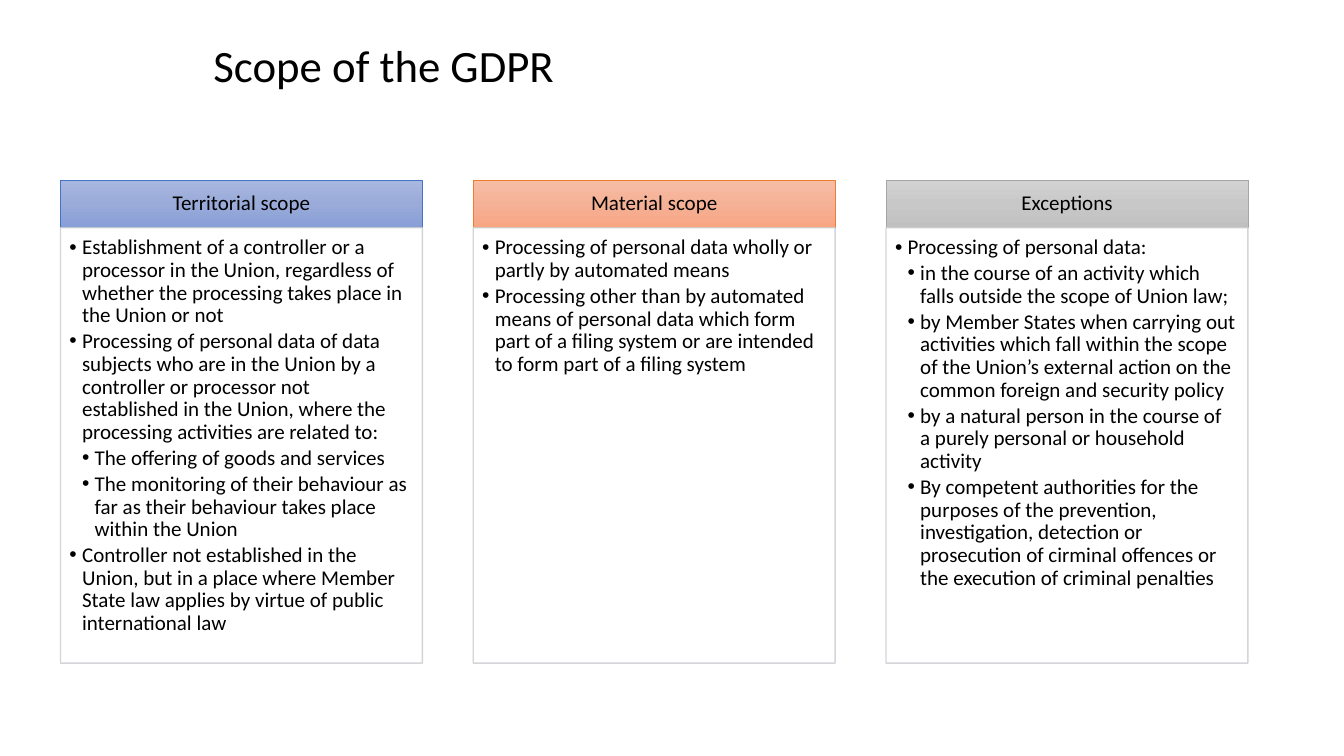
from copy import deepcopy

from lxml.etree import SubElement
from pptx import Presentation
from pptx.dml.color import RGBColor
from pptx.enum.shapes import MSO_SHAPE as Shape
from pptx.enum.text import MSO_ANCHOR as Anchor, PP_ALIGN as Align
from pptx.oxml.ns import qn
from pptx.util import Pt

FONT = "Calibri"
BODY_LINE = "CFD1D4"

# Column grid, in points
LEFT, PITCH, WIDTH = 43.2, 294.84, 258.5
HEADER_TOP, HEADER_HEIGHT, BODY_HEIGHT = 128.9, 33.8, 311
INDENT = 9

# Heading, gradient, border and (level, text) items of each column
COLUMNS = [
    ("Territorial scope", ("A8B7DF", "9AABD9", "889ED7"), "4472C4", [
        (1, "Establishment of a controller or a processor in the Union, "
            "regardless of whether the processing takes place in the Union or not"),
        (1, "Processing of personal data of data subjects who are in the Union "
            "by a controller or processor not established in the Union, where "
            "the processing activities are related to:"),
        (2, "The offering of goods and services"),
        (2, "The monitoring of their behaviour as far as their behaviour takes "
            "place within the Union"),
        (1, "Controller not established in the Union, but in a place where "
            "Member State law applies by virtue of public international law"),
    ]),
    ("Material scope", ("F7BDA5", "F5B196", "F8A582"), "ED7D31", [
        (1, "Processing of personal data wholly or partly by automated means"),
        (1, "Processing other than by automated means of personal data which "
            "form part of a filing system or are intended to form part of a "
            "filing system"),
    ]),
    ("Exceptions", ("D2D2D2", "C8C8C8", "C0C0C0"), "A5A5A5", [
        (1, "Processing of personal data:"),
        (2, "in the course of an activity which falls outside the scope of "
            "Union law;"),
        (2, "by Member States when carrying out activities which fall within "
            "the scope of the Union’s external action on the common foreign "
            "and security policy"),
        (2, "by a natural person in the course of a purely personal or "
            "household activity"),
        (2, "By competent authorities for the purposes of the prevention, "
            "investigation, detection or prosecution of cirminal offences or "
            "the execution of criminal penalties"),
    ]),
]


def color(hex_value):
    return RGBColor.from_string(hex_value)


def set_values(target, values):
    for name, value in values.items():
        setattr(target, name, value)


def format_frame(frame, anchor, margins):
    sides = ("margin_left", "margin_top", "margin_right", "margin_bottom")
    set_values(frame, {"word_wrap": True, "vertical_anchor": anchor})
    set_values(frame, dict(zip(sides, map(Pt, margins))))


def write_para(para, text, size, align=Align.LEFT, after=0):
    set_values(para, {"alignment": align, "line_spacing": 0.9,
                      "space_after": Pt(after)})
    span = para.add_run()
    span.text = text
    set_values(span.font, {"name": FONT, "size": Pt(size)})
    span.font.color.rgb = color("000000")


def add_bullet(para, level):
    para.level = level
    props = para._p.get_or_add_pPr()
    props.set("marL", str(Pt(INDENT * level)))
    props.set("indent", str(-Pt(INDENT)))
    SubElement(props, qn("a:buFont"), typeface="Arial")
    SubElement(props, qn("a:buChar"), char="•")


def fill_gradient(box, colors):
    box.fill.gradient()
    box.fill.gradient_angle = 270
    # A middle stop joins the two default ones
    stop_list = box._element.spPr.find(".//" + qn("a:gsLst"))
    stop_list.insert(1, deepcopy(stop_list[0]))
    for stop, position, hex_value in zip(box.fill.gradient_stops, (0, 0.5, 1), colors):
        stop.position = position
        stop.color.rgb = color(hex_value)


def add_box(page, left, top, height, line_color, line_width):
    box = page.shapes.add_shape(Shape.RECTANGLE, Pt(left), Pt(top),
                                Pt(WIDTH), Pt(height))
    box.shadow.inherit = False
    box.line.color.rgb = color(line_color)
    box.line.width = Pt(line_width)
    return box


def add_title(page, text):
    box = page.shapes.add_textbox(Pt(145.4), Pt(20.2), Pt(659.5), Pt(56.9))
    format_frame(box.text_frame, Anchor.MIDDLE, (7.2, 3.6, 7.2, 3.6))
    write_para(box.text_frame.paragraphs[0], text, 32)


def add_header(page, left, text, colors, line_color):
    box = add_box(page, left, HEADER_TOP, HEADER_HEIGHT, line_color, 0.5)
    fill_gradient(box, colors)
    format_frame(box.text_frame, Anchor.MIDDLE, (8.5, 4.9, 8.5, 4.9))
    write_para(box.text_frame.paragraphs[0], text, 15, Align.CENTER)


def add_body(page, left, items):
    box = add_box(page, left, HEADER_TOP + HEADER_HEIGHT, BODY_HEIGHT, BODY_LINE, 1)
    box.fill.background()
    line_color = box._element.spPr.find(qn("a:ln")).find(".//" + qn("a:srgbClr"))
    SubElement(line_color, qn("a:alpha"), val="90000")
    frame = box.text_frame
    format_frame(frame, Anchor.TOP, (6.4, 6.4, 8.5, 9.6))
    for index, (level, text) in enumerate(items):
        para = frame.add_paragraph() if index else frame.paragraphs[0]
        write_para(para, text, 15, after=2.25)
        add_bullet(para, level)


def main():
    deck = Presentation()
    set_values(deck, {"slide_width": Pt(960), "slide_height": Pt(540)})
    page = deck.slides.add_slide(deck.slide_layouts[6])

    add_title(page, "Scope of the GDPR")

    # Three columns, each a header above a bulleted body
    for index, (heading, colors, line_color, items) in enumerate(COLUMNS):
        left = LEFT + index * PITCH
        add_header(page, left, heading, colors, line_color)
        add_body(page, left, items)

    deck.save("out.pptx")


if __name__ == "__main__":
    main()
